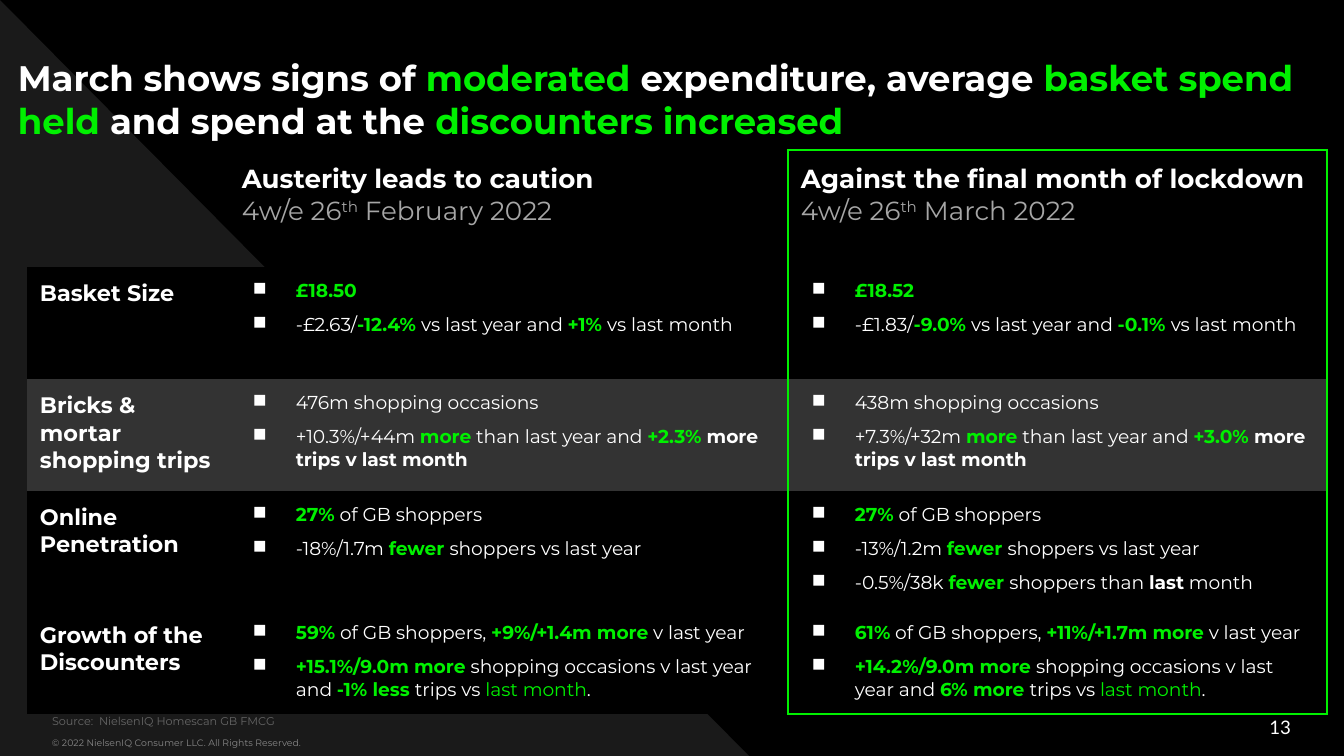
from pptx import Presentation
from pptx import util as u
from pptx.dml.color import RGBColor
from pptx.enum import shapes, text
from pptx.oxml import parse_xml
from pptx.oxml.ns import nsdecls

EMU_PER_PX = 914400 / 134.4
WHITE, GREEN, GREY, BLACK, BAND = "FFFFFF", "00F000", "A6A6A6", "000000", "333333"
FONT = "Montserrat"
NO_STYLE = "{2D5ABB26-0587-4C30-8999-92F81FD0307C}"
COLUMNS = [202, 559, 539]
ROWS = [117, 112, 112, 118, 105]


def px(value):
    return u.Emu(round(value * EMU_PER_PX))


def paint(target, colour):
    target.solid()
    target.fore_color.rgb = RGBColor.from_string(colour)


def green(words):
    return words, GREEN, True


def strong(words):
    return words, WHITE, True


def accent(words):
    return words, GREEN, False


HEADINGS = [
    ("Austerity leads to caution", " February 2022"),
    ("Against the final month of lockdown", " March 2022"),
]
TOPICS = [
    ("Basket Size", BLACK, [
        [[green("£18.50")],
         ["-£2.63/", green("-12.4% "), "vs last year and ", green("+1% "), "vs last month"]],
        [[green("£18.52")],
         ["-£1.83/", green("-9.0% "), "vs last year and ", green("-0.1% "), "vs last month"]],
    ]),
    ("Bricks & mortar shopping trips", BAND, [
        [["476m shopping occasions"],
         ["+10.3%/+44m ", green("more"), " than last year and ", green("+2.3%"),
          strong(" more trips v last month")]],
        [["438m shopping occasions"],
         ["+7.3%/+32m ", green("more"), " than last year and ", green("+3.0%"),
          strong(" more trips v last month")]],
    ]),
    ("Online Penetration", BLACK, [
        [[green("27%"), " of GB shoppers"],
         ["-18%/1.7m ", green("fewer "), "shoppers vs last year"]],
        [[green("27%"), " of GB shoppers"],
         ["-13%/1.2m ", green("fewer "), "shoppers vs last year"],
         ["-0.5%/38k ", green("fewer "), "shoppers than ", strong("last"), " month"]],
    ]),
    ("Growth of the Discounters", BLACK, [
        [[green("59%"), " of GB shoppers, ", green("+9%/+1.4m more"), " v last year"],
         [green("+15.1%/9.0m more "), "shopping occasions v last year and ",
          green("-1% less "), "trips vs ", accent("last month"), "."]],
        [[green("61%"), " of GB shoppers, ", green("+11%/+1.7m more"), " v last year"],
         [green("+14.2%/9.0m more "), "shopping occasions v last year and ",
          green("6% more "), "trips vs ", accent("last month"), "."]],
    ]),
]


def write(para, spans, size, colour=WHITE, bold=False, font=FONT):
    para.font.name, para.font.size, para.font.bold = font, u.Pt(size), bold
    paint(para.font.fill, colour)
    for words in spans:
        span = para.add_run()
        if isinstance(words, str):
            span.text = words
        else:
            span.text, tint, span.font.bold = words
            paint(span.font.fill, tint)


def fit(box, left, top, width, height, inset, anchor):
    box.left, box.top, box.width, box.height = map(px, (left, top, width, height))
    frame = box.text_frame
    frame.word_wrap = True
    frame.auto_size = text.MSO_AUTO_SIZE.NONE
    frame.vertical_anchor = anchor
    frame.margin_left = frame.margin_right = 0
    frame.margin_top = frame.margin_bottom = px(inset)
    para = frame.paragraphs[0]
    para.alignment = text.PP_ALIGN.LEFT
    para.space_before = u.Pt(0)
    return para


def add_label(page, place, words, size, colour, anchor, font=FONT):
    box = page.shapes.add_textbox(0, 0, 0, 0)
    para = fit(box, *place, 7, anchor)
    write(para, [words], size, colour, font=font)
    return para


def add_corner(page):
    corner = page.shapes.add_shape(
        shapes.MSO_SHAPE.RIGHT_TRIANGLE, 0, 0, px(751), px(758))
    corner.shadow.inherit = False
    paint(corner.fill, "1A1A1A")
    corner.line.fill.background()
    page.shapes.title.element.addprevious(corner.element)


def add_bullet(para):
    props = para._p.get_or_add_pPr()
    props.set("marL", str(px(54)))
    props.set("indent", str(px(-43)))
    props.append(parse_xml(
        f'<a:buClr {nsdecls("a")}><a:srgbClr val="{WHITE}"/></a:buClr>'))
    props.append(parse_xml(f'<a:buChar {nsdecls("a")} char="■"/>'))


def outline(cell, sides):
    props = cell._tc.get_or_add_tcPr()
    for side in sides:
        props.append(parse_xml(
            f'<a:ln{side} {nsdecls("a")} w="12700"><a:solidFill>'
            f'<a:srgbClr val="{GREEN}"/></a:solidFill></a:ln{side}>'))


def fill_heading(cell, heading, month):
    frame = cell.text_frame
    write(frame.paragraphs[0], [heading], 14, bold=True)
    date = frame.add_paragraph()
    write(date, ["4w/e 26", "th", month], 14, GREY)
    date.runs[1]._r.get_or_add_rPr().set("baseline", "30000")


def fill_bullets(cell, lines):
    frame = cell.text_frame
    for index, spans in enumerate(lines):
        para = frame.add_paragraph() if index else frame.paragraphs[0]
        add_bullet(para)
        para.space_before = u.Pt(6 if index else 0)
        write(para, spans, 10)


def format_cells(table):
    last = len(ROWS) - 1
    for row in range(len(ROWS)):
        for column in range(len(COLUMNS)):
            cell = table.cell(row, column)
            cell.margin_left = cell.margin_right = px(13)
            cell.margin_top = cell.margin_bottom = px(13)
            if column == 1:
                outline(cell, "R")
            elif column == 2:
                outline(cell, "LR" + "T" * (row == 0) + "B" * (row == last))
            if row:
                paint(cell.fill, TOPICS[row - 1][1])
            else:
                cell.fill.background()


def add_comparison(page):
    holder = page.shapes.add_table(
        len(ROWS), len(COLUMNS), px(27), px(150), px(sum(COLUMNS)), px(sum(ROWS)))
    holder.element.xpath(".//a:tableStyleId")[0].text = NO_STYLE
    table = holder.table
    table.first_row = table.horz_banding = False
    for column, width in zip(table.columns, COLUMNS):
        column.width = px(width)
    for row, height in zip(table.rows, ROWS):
        row.height = px(height)
    format_cells(table)
    for column, heading in enumerate(HEADINGS, 1):
        fill_heading(table.cell(0, column), *heading)
    for row, (topic, _, periods) in enumerate(TOPICS, 1):
        write(table.cell(row, 0).text_frame.paragraphs[0], [topic], 12, bold=True)
        for column, lines in enumerate(periods, 1):
            fill_bullets(table.cell(row, column), lines)


def main():
    deck = Presentation()
    deck.slide_width, deck.slide_height = px(1344), px(756)
    page = deck.slides.add_slide(deck.slide_layouts[0])
    paint(page.background.fill, BLACK)
    add_corner(page)
    top, middle, bottom = (
        text.MSO_ANCHOR.TOP, text.MSO_ANCHOR.MIDDLE, text.MSO_ANCHOR.BOTTOM)
    title = fit(page.shapes.title, 18, 43, 1309, 100, 13, top)
    write(title, ["March shows signs of ", green("moderated"), " expenditure, average",
                  green(" basket spend held "), "and spend at the ",
                  green("discounters increased")], 19, bold=True)
    source = fit(page.placeholders[1], 52, 714, 1199, 27, 13, bottom)
    write(source, ["Source: \u00a0NielsenIQ Homescan GB FMCG".replace("\u00a0", " ")],
          6, "666666")
    add_label(page, (52, 730, 745, 27),
              "© 2022 NielsenIQ Consumer LLC. All Rights Reserved.", 5, "888888", top)
    number = add_label(page, (989, 707, 302, 40), "13", 10, WHITE, middle, "Lato")
    number.alignment = text.PP_ALIGN.RIGHT
    add_comparison(page)
    deck.save("out.pptx")


if __name__ == "__main__":
    main()
